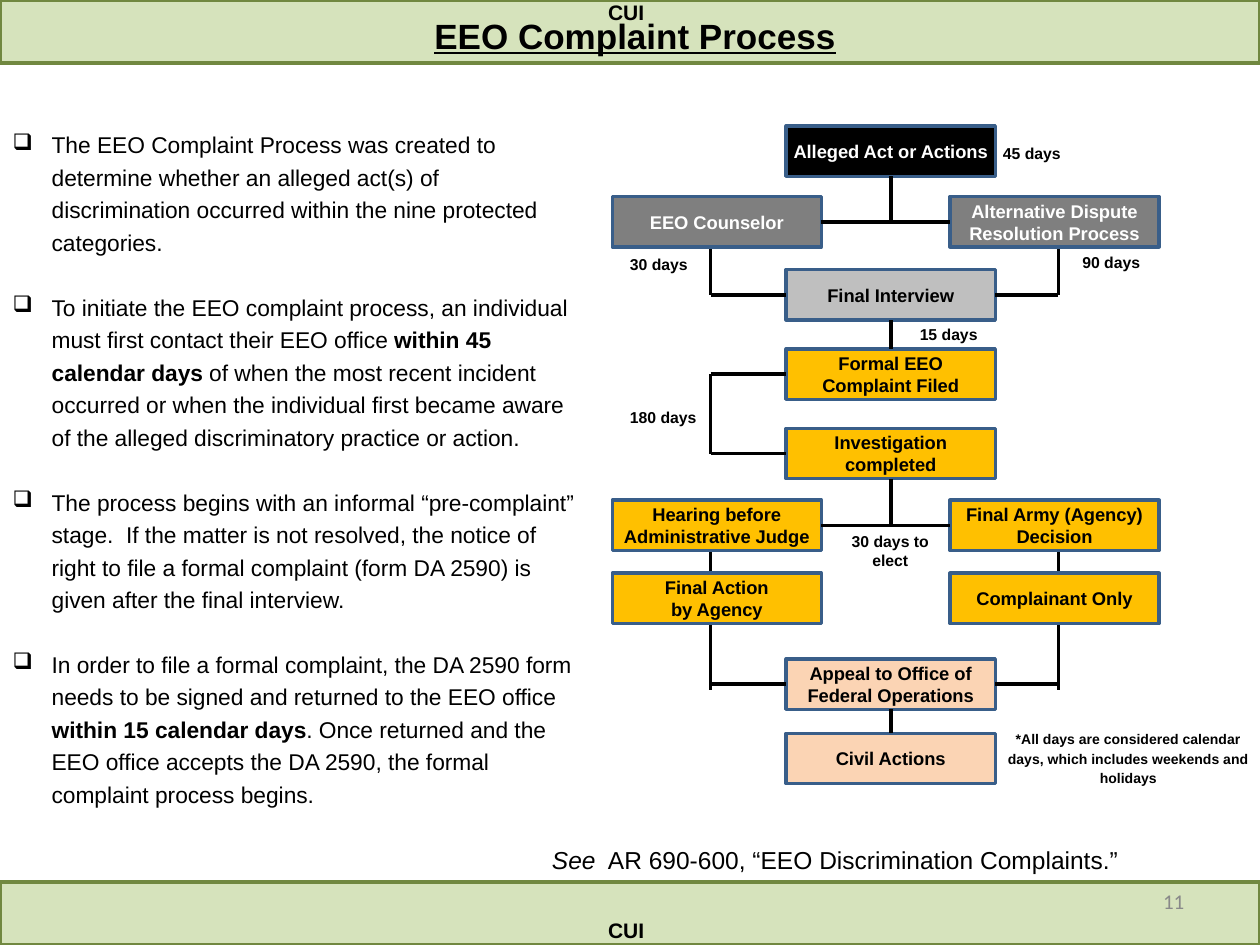
from lxml.etree import SubElement
from pptx import Presentation
from pptx.dml.color import RGBColor
from pptx.enum.shapes import MSO_CONNECTOR, MSO_SHAPE
from pptx.enum.text import MSO_ANCHOR, PP_ALIGN
from pptx.oxml.ns import qn
from pptx.util import Inches, Pt

COLORS = {
    "black": "000000", "white": "FFFFFF", "band": "D6E3BC", "band_line": "718840",
    "node_line": "395E89", "dark": "7F7F7F", "light": "BFBFBF",
    "gold": "FFC000", "peach": "FBD4B4", "number": "898989",
}
TOP, LEFT, BOTTOM, RIGHT = range(4)
NODE_WIDTH, NODE_HEIGHT = 1.66, 0.4
LEFT_COLUMN, MIDDLE_COLUMN, RIGHT_COLUMN = 4.86, 6.24, 7.54
LEFT_RAIL, MIDDLE_RAIL, RIGHT_RAIL = 5.64, 7.07, 8.4

# name: (left, top, fill, font colour, text)
NODES = {
    "act": (MIDDLE_COLUMN, 1, "black", "white", "Alleged Act or Actions"),
    "counselor": (LEFT_COLUMN, 1.56, "dark", "white", "EEO Counselor"),
    "dispute": (RIGHT_COLUMN, 1.56, "dark", "white", "Alternative Dispute\nResolution Process"),
    "interview": (MIDDLE_COLUMN, 2.14, "light", "black", "Final Interview"),
    "complaint": (MIDDLE_COLUMN, 2.77, "gold", "black", "Formal EEO\nComplaint Filed"),
    "investigation": (MIDDLE_COLUMN, 3.4, "gold", "black", "Investigation\ncompleted"),
    "hearing": (LEFT_COLUMN, 3.97, "gold", "black", "Hearing before\nAdministrative Judge"),
    "decision": (RIGHT_COLUMN, 3.97, "gold", "black", "Final Army (Agency)\nDecision"),
    "action": (LEFT_COLUMN, 4.55, "gold", "black", "Final Action\nby Agency"),
    "complainant": (RIGHT_COLUMN, 4.55, "gold", "black", "Complainant Only"),
    "appeal": (MIDDLE_COLUMN, 5.23, "peach", "black", "Appeal to Office of\nFederal Operations"),
    "civil": (MIDDLE_COLUMN, 5.82, "peach", "black", "Civil Actions"),
}
# Vertical lines behind the nodes: x, top, bottom
RAILS = [
    (LEFT_RAIL, 1.76, 2.34), (RIGHT_RAIL, 1.76, 2.34), (LEFT_RAIL, 2.97, 3.6),
    (LEFT_RAIL, 4.17, 5.48), (RIGHT_RAIL, 4.17, 5.48),
]
# Each end is a (node, side) pair or a free (x, y) point
LINKS = [
    (("act", BOTTOM), (MIDDLE_RAIL, 1.76)),
    (("counselor", RIGHT), ("dispute", LEFT)),
    ((LEFT_RAIL, 2.34), ("interview", LEFT)),
    (("interview", RIGHT), (RIGHT_RAIL, 2.34)),
    (("interview", BOTTOM), ("complaint", TOP)),
    ((LEFT_RAIL, 2.97), ("complaint", LEFT)),
    ((LEFT_RAIL, 3.6), ("investigation", LEFT)),
    (("investigation", BOTTOM), (MIDDLE_RAIL, 4.17)),
    (("hearing", RIGHT), ("decision", LEFT)),
    ((LEFT_RAIL, 5.43), ("appeal", LEFT)),
    (("appeal", RIGHT), (RIGHT_RAIL, 5.43)),
    (("appeal", BOTTOM), ("civil", TOP)),
]
DAY_LABELS = [
    (7.96, 1.13, "45 days"), (8.59, 2, "90 days"), (5, 2.01, "30 days"),
    (5, 3.23, "180 days"), (7.3, 2.57, "15 days"),
]
BULLETS = [
    [("The EEO Complaint Process was created to determine whether an alleged act(s) of "
      "discrimination occurred within the nine protected categories.", {})],
    [("To initiate the EEO complaint process, an individual must first contact their EEO office ", {}),
     ("within 45 calendar days ", {"bold": True}),
     ("of when the most recent incident occurred or when the individual first became aware of "
      "the alleged discriminatory practice or action.", {})],
    [("The process begins with an informal “pre-complaint” stage.  If the matter is not resolved, "
      "the notice of right to file a formal complaint (form DA 2590) is given after the final "
      "interview.", {})],
    [("In order to file a formal complaint, the DA 2590 form needs to be signed and returned to "
      "the EEO office ", {}),
     ("within 15 calendar days", {"bold": True}),
     (". Once returned and the EEO office accepts the DA 2590, the formal complaint process "
      "begins.", {})],
]


def color(name):
    return RGBColor.from_string(COLORS[name])


def apply(target, values):
    for name, value in values.items():
        setattr(target, name, value)


def format_font(font, size, color_name="black", **values):
    apply(font, {"name": "Arial", "size": Pt(size), **values})
    font.color.rgb = color(color_name)


def set_frame(frame, anchor):
    apply(frame, {"word_wrap": True, "vertical_anchor": anchor, "margin_left": 0,
                  "margin_right": 0, "margin_top": 0, "margin_bottom": 0})


def add_box(slide, left, top, width, height, fill, line):
    shape = slide.shapes.add_shape(
        MSO_SHAPE.RECTANGLE, Inches(left), Inches(top), Inches(width), Inches(height))
    shape.shadow.inherit = False
    shape.fill.solid()
    shape.fill.fore_color.rgb = color(fill)
    shape.line.color.rgb = color(line)
    shape.line.width = Pt(2)
    return shape


def add_text(slide, left, top, width, height, runs, size, align=PP_ALIGN.CENTER,
             anchor=MSO_ANCHOR.MIDDLE, color_name="black", **values):
    """Add a one-paragraph text box; runs are (text, font values) pairs."""
    box = slide.shapes.add_textbox(Inches(left), Inches(top), Inches(width), Inches(height))
    set_frame(box.text_frame, anchor)
    paragraph = box.text_frame.paragraphs[0]
    paragraph.alignment = align
    add_runs(paragraph, runs, size, color_name, **values)
    return paragraph


def add_runs(paragraph, runs, size, color_name="black", **values):
    for text, run_values in runs:
        run = paragraph.add_run()
        run.text = text
        format_font(run.font, size, color_name, **{**values, **run_values})


def add_node(slide, left, top, fill, font_color, text):
    shape = add_box(slide, left, top, NODE_WIDTH, NODE_HEIGHT, fill, "node_line")
    set_frame(shape.text_frame, MSO_ANCHOR.MIDDLE)
    shape.text_frame.text = text
    for paragraph in shape.text_frame.paragraphs:
        paragraph.alignment = PP_ALIGN.CENTER
        format_font(paragraph.font, 10.5, font_color, bold=True)
    return shape


def add_link(slide, start, end, nodes):
    """Draw a straight line, joined to a node wherever an end names one."""
    points = [(0, 0) if point[0] in nodes else point for point in (start, end)]
    connector = slide.shapes.add_connector(
        MSO_CONNECTOR.STRAIGHT, *(Inches(value) for point in points for value in point))
    for point, join in ((start, connector.begin_connect), (end, connector.end_connect)):
        if point[0] in nodes:
            join(nodes[point[0]], point[1])
    connector.line.color.rgb = color("black")
    connector.line.width = Pt(2)
    SubElement(connector._element.spPr, qn("a:effectLst"))


def add_bullets(slide):
    box = slide.shapes.add_textbox(Inches(0.08), Inches(1), Inches(4.52), Inches(5.47))
    frame = box.text_frame
    set_frame(frame, MSO_ANCHOR.TOP)
    for index, runs in enumerate(BULLETS):
        paragraph = frame.add_paragraph() if index else frame.paragraphs[0]
        properties = paragraph._p.get_or_add_pPr()
        properties.set("marL", str(Inches(0.33)))
        properties.set("indent", str(Inches(-0.31)))
        SubElement(properties, qn("a:buChar")).set("char", "❑")
        paragraph.line_spacing = 1.19
        if index:
            paragraph.space_before = Pt(18.5)
        add_runs(paragraph, runs, 13)


def add_flowchart(slide):
    for x, top, bottom in RAILS:
        add_link(slide, (x, top), (x, bottom), {})
    nodes = {name: add_node(slide, *values) for name, values in NODES.items()}
    for start, end in LINKS:
        add_link(slide, start, end, nodes)
    for left, top, text in DAY_LABELS:
        add_text(slide, left, top, 0.6, 0.17, [(text, {})], 9, PP_ALIGN.LEFT, bold=True)
    add_text(slide, 6.64, 4.21, 0.85, 0.32, [("30 days to elect", {})], 9, bold=True)
    footnote = "*All days are considered calendar days, which includes weekends and holidays"
    add_text(slide, 7.92, 5.78, 2.07, 0.46, [(footnote, {})], 8, bold=True).line_spacing = 1.15


def main():
    presentation = Presentation()
    presentation.slide_width, presentation.slide_height = Inches(10), Inches(7.5)
    slide = presentation.slides.add_slide(presentation.slide_layouts[6])
    for band_top, mark_top in ((7, 7.23), (0, -0.05)):
        add_box(slide, 0, band_top, 10, 0.5, "band", "band_line")
        add_text(slide, 4.72, mark_top, 0.5, 0.3, [("CUI", {})], 12, bold=True)
    add_text(slide, 0.54, -0.08, 9, 0.72, [("EEO Complaint Process", {})], 20,
             bold=True, underline=True)
    add_bullets(slide)
    add_flowchart(slide)
    reference = [("See", {"italic": True}), ("  AR 690-600, “EEO Discrimination Complaints.”", {})]
    add_text(slide, 3.4, 6.65, 6.46, 0.34, reference, 14)
    add_text(slide, 7.17, 6.95, 2.23, 0.4, [("11", {})], 12, PP_ALIGN.RIGHT,
             color_name="number", name="Calibri")
    presentation.save("out.pptx")


if __name__ == "__main__":
    main()
